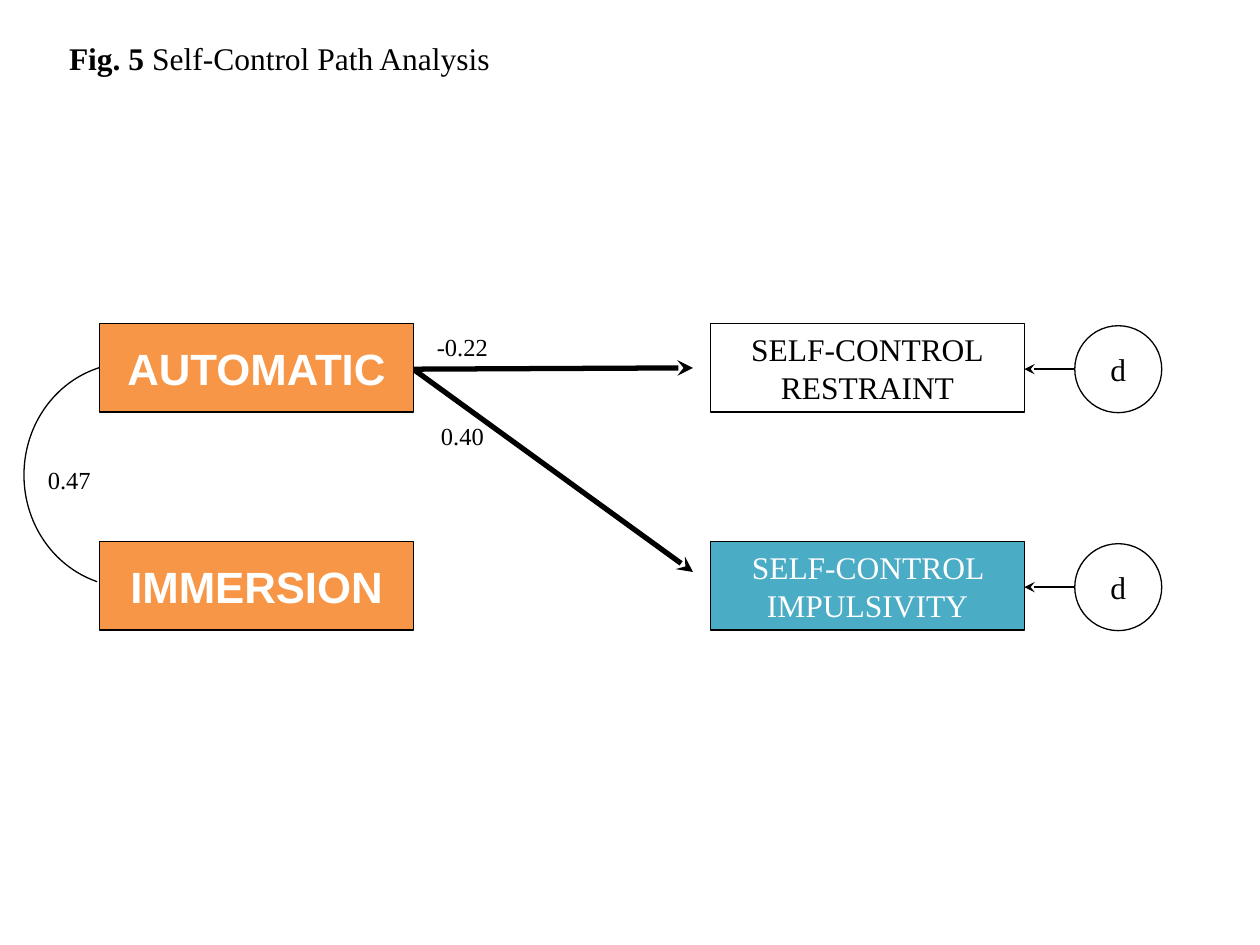
import pptx
import pptx.util
import pptx.dml.color
import pptx.enum.shapes
import pptx.enum.text
import pptx.oxml
import pptx.oxml.ns
from pptx.util import Inches

SERIF = "Times New Roman"
SHAPE = pptx.enum.shapes.MSO_SHAPE
BOX_W, BOX_H = 2.49, 0.7
LEFT_X, RIGHT_X = 0.79, 5.64
ROW_TOPS = (2.57, 4.3)


def color(value):
    """Return the RGB colour for a hex string."""
    return pptx.dml.color.RGBColor.from_string(value)


def write(s, text, size, font=SERIF, ink="000000", bold=False):
    """Fill a shape with centred lines of text in one style."""
    tf = s.text_frame
    tf.word_wrap = True
    tf.vertical_anchor = pptx.enum.text.MSO_ANCHOR.MIDDLE
    tf.text = text
    for p in tf.paragraphs:
        p.alignment = pptx.enum.text.PP_ALIGN.CENTER
        p.font.name, p.font.size, p.font.bold = font, pptx.util.Pt(size), bold
        p.font.color.rgb = color(ink)


def add_outlined(slide, kind, x, y, w, h, fill=None):
    """Add a preset shape with a thin black outline."""
    s = slide.shapes.add_shape(kind, Inches(x), Inches(y), Inches(w), Inches(h))
    s.shadow.inherit = False
    if fill:
        s.fill.solid()
        s.fill.fore_color.rgb = color(fill)
    else:
        s.fill.background()
    s.line.color.rgb = color("000000")
    s.line.width = pptx.util.Pt(0.75)
    return s


def add_arrow(slide, x1, y1, x2, y2, width):
    """Add a straight black arrow with a stealth head."""
    line = slide.shapes.add_connector(
        pptx.enum.shapes.MSO_CONNECTOR.STRAIGHT,
        Inches(x1), Inches(y1), Inches(x2), Inches(y2))
    line.line.color.rgb = color("000000")
    line.line.width = pptx.util.Pt(width)
    head = pptx.oxml.parse_xml(
        f'<a:tailEnd {pptx.oxml.ns.nsdecls("a")} type="stealth"/>')
    line.line._get_or_add_ln().append(head)
    line._element.spPr.append(pptx.oxml.parse_xml(
        f'<a:effectLst {pptx.oxml.ns.nsdecls("a")}/>'))


def add_title(slide, x, y, w, h):
    """Add the figure caption with its bold number."""
    tf = slide.shapes.add_textbox(
        Inches(x), Inches(y), Inches(w), Inches(h)).text_frame
    tf.word_wrap = True
    p = tf.paragraphs[0]
    p.font.name, p.font.size = SERIF, pptx.util.Pt(18)
    p.font.color.rgb = color("000000")
    for text, bold in (("Fig. 5 ", True), ("Self-Control Path Analysis", False)):
        r = p.add_run()
        r.text, r.font.bold = text, bold


def add_predictor(slide, x, y, w, h, text):
    """Add an orange predictor box."""
    s = add_outlined(slide, SHAPE.RECTANGLE, x, y, w, h, "F79646")
    write(s, text, 25, "Arial", "FFFFFF", True)


def add_outcome(slide, x, y, w, h, text, fill, ink):
    """Add an outcome box with its disturbance circle and arrow."""
    s = add_outlined(slide, SHAPE.RECTANGLE, x, y, w, h, fill)
    write(s, text, 18, ink=ink)
    size, gap = 0.69, 0.4
    middle = y + h / 2 + 0.01
    circle = add_outlined(slide, SHAPE.OVAL, x + w + gap, middle - size / 2,
                          size, size)
    write(circle, "d", 18)
    add_arrow(slide, x + w + gap, middle, x + w, middle, 1)


def add_correlation(slide, x, y, w, h):
    """Add the arc that joins the two predictors on their left."""
    arc = add_outlined(slide, SHAPE.ARC, x, y, w, h)
    arc.rotation = 270
    arc.adjustments[0], arc.adjustments[1] = 118.21, 206.41


def add_coefficient(slide, x, y, w, h, text):
    """Add a path coefficient."""
    write(slide.shapes.add_textbox(Inches(x), Inches(y), Inches(w), Inches(h)),
          text, 14)


def main():
    """Build the path diagram slide."""
    prs = pptx.Presentation()
    prs.slide_width, prs.slide_height = Inches(10), Inches(7.5)
    slide = prs.slides.add_slide(prs.slide_layouts[6])

    outcomes = (("SELF-CONTROL\nRESTRAINT", "FFFFFF", "000000"),
                ("SELF-CONTROL IMPULSIVITY", "4BACC6", "FFFFFF"))
    for y, outcome in zip(ROW_TOPS, outcomes):
        add_outcome(slide, RIGHT_X, y, BOX_W, BOX_H, *outcome)

    start_x, start_y = LEFT_X + BOX_W, 2.93
    for end_y in (2.92, 4.54):
        add_arrow(slide, start_x, start_y, 5.5, end_y, 3)

    add_correlation(slide, 0.14, 2.93, 1.78, 1.68)
    for x, y, w, text in ((0, 3.46, 1.1, "0.47"),
                          (start_x, 3.11, 0.78, "0.40"),
                          (start_x, 2.4, 0.78, "-0.22")):
        add_coefficient(slide, x, y, w, BOX_H, text)

    add_title(slide, 0.45, 0.26, 9.1, 0.4)
    for y, text in zip(ROW_TOPS, ("AUTOMATIC", "IMMERSION")):
        add_predictor(slide, LEFT_X, y, BOX_W, BOX_H, text)

    prs.save("out.pptx")


if __name__ == "__main__":
    main()
